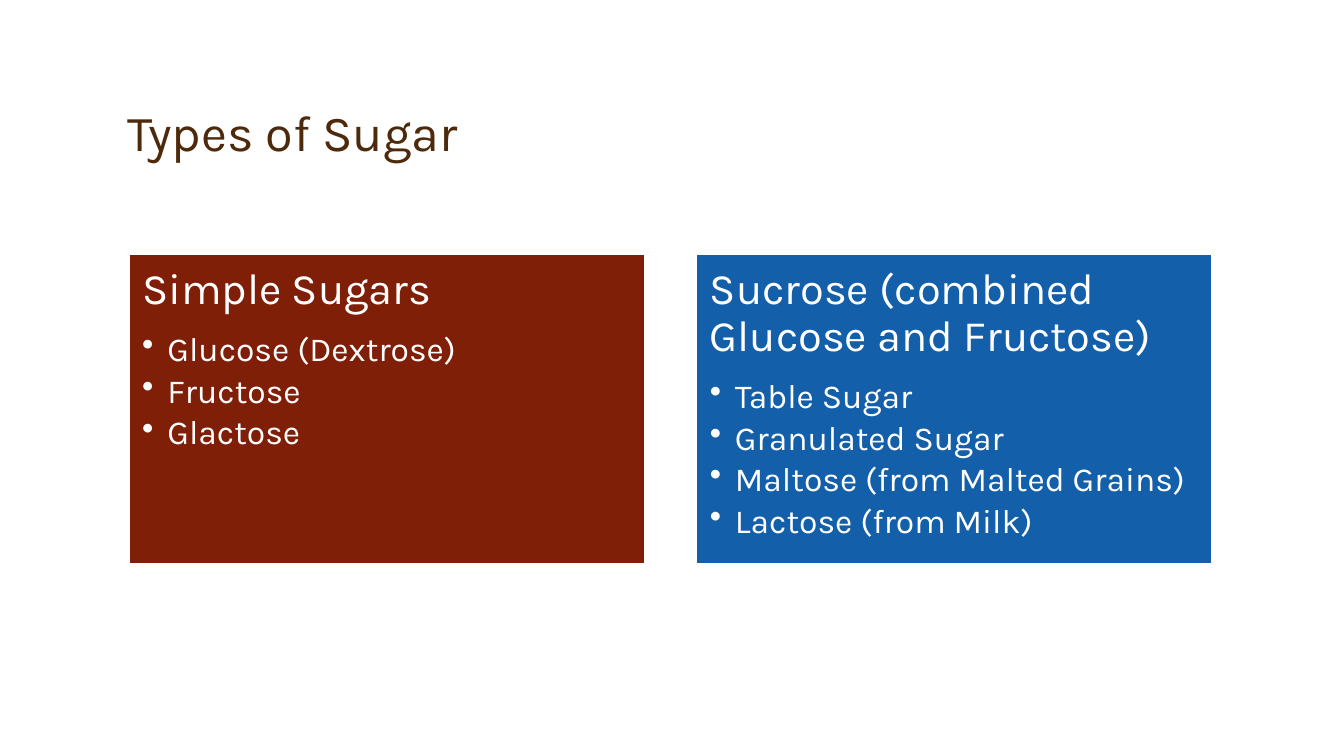
from lxml import etree
from pptx import Presentation
from pptx.dml.color import RGBColor
from pptx.enum.shapes import MSO_SHAPE as SHAPE
from pptx.enum.text import MSO_ANCHOR as ANCHOR, PP_ALIGN as ALIGN
from pptx.oxml.ns import qn
from pptx.util import Pt

PX = 9144
FONT = "Karla"
WHITE = "FFFFFF"
CARD_W, CARD_GAP = 511, 52
CARDS = [
    ("Simple Sugars", "801F08", ["Glucose (Dextrose)", "Fructose", "Glactose"]),
    ("Sucrose (combined Glucose and Fructose)", "145FAA",
     ["Table Sugar", "Granulated Sugar", "Maltose (from Malted Grains)", "Lactose (from Milk)"]),
]


def px(n):
    return n * PX


def rgb(value):
    return RGBColor.from_string(value)


def place(sp, box):
    sp.left, sp.top, sp.width, sp.height = map(px, box)


def style(p, size, color, after=0):
    p.alignment = ALIGN.LEFT
    p.line_spacing = 0.9
    p.space_before = Pt(0)
    p.space_after = Pt(after)
    for r in p.runs:
        r.font.name = FONT
        r.font.size = Pt(size)
        r.font.color.rgb = rgb(color)


def add_bullet(p):
    pPr = p._p.get_or_add_pPr()
    pPr.set("marL", str(px(25)))
    pPr.set("indent", str(px(-25)))
    etree.SubElement(pPr, qn("a:buChar")).set("char", "•")


def add_title(s, text, box):
    sp = s.shapes.title
    place(sp, box)
    tf = sp.text_frame
    tf.text = text
    tf.word_wrap = True
    tf.vertical_anchor = ANCHOR.BOTTOM
    style(tf.paragraphs[0], 36, "4D2A0B")


def add_card(s, heading, fill, items, box):
    sp = s.shapes.add_shape(SHAPE.RECTANGLE, *map(px, box))
    sp.shadow.inherit = False
    sp.fill.solid()
    sp.fill.fore_color.rgb = rgb(fill)
    sp.line.color.rgb = rgb(WHITE)
    sp.line.width = Pt(1)
    tf = sp.text_frame
    tf.word_wrap = True
    tf.vertical_anchor = ANCHOR.TOP
    tf.margin_left = tf.margin_top = tf.margin_right = tf.margin_bottom = px(13)
    tf.text = heading
    style(tf.paragraphs[0], 31, WHITE, after=13)
    for item in items:
        p = tf.add_paragraph()
        p.text = item
        p.level = 1
        add_bullet(p)
        style(p, 24, WHITE, after=4)


def main():
    prs = Presentation()
    prs.slide_width, prs.slide_height = px(1333), px(750)
    s = prs.slides.add_slide(prs.slide_layouts[5])
    add_title(s, "Types of Sugar", (116, 33, 1100, 133))
    for i, (heading, fill, items) in enumerate(CARDS):
        left = 128 + i * (CARD_W + CARD_GAP)
        add_card(s, heading, fill, items, (left, 252, CARD_W, 307))
    prs.save("out.pptx")


if __name__ == "__main__":
    main()
